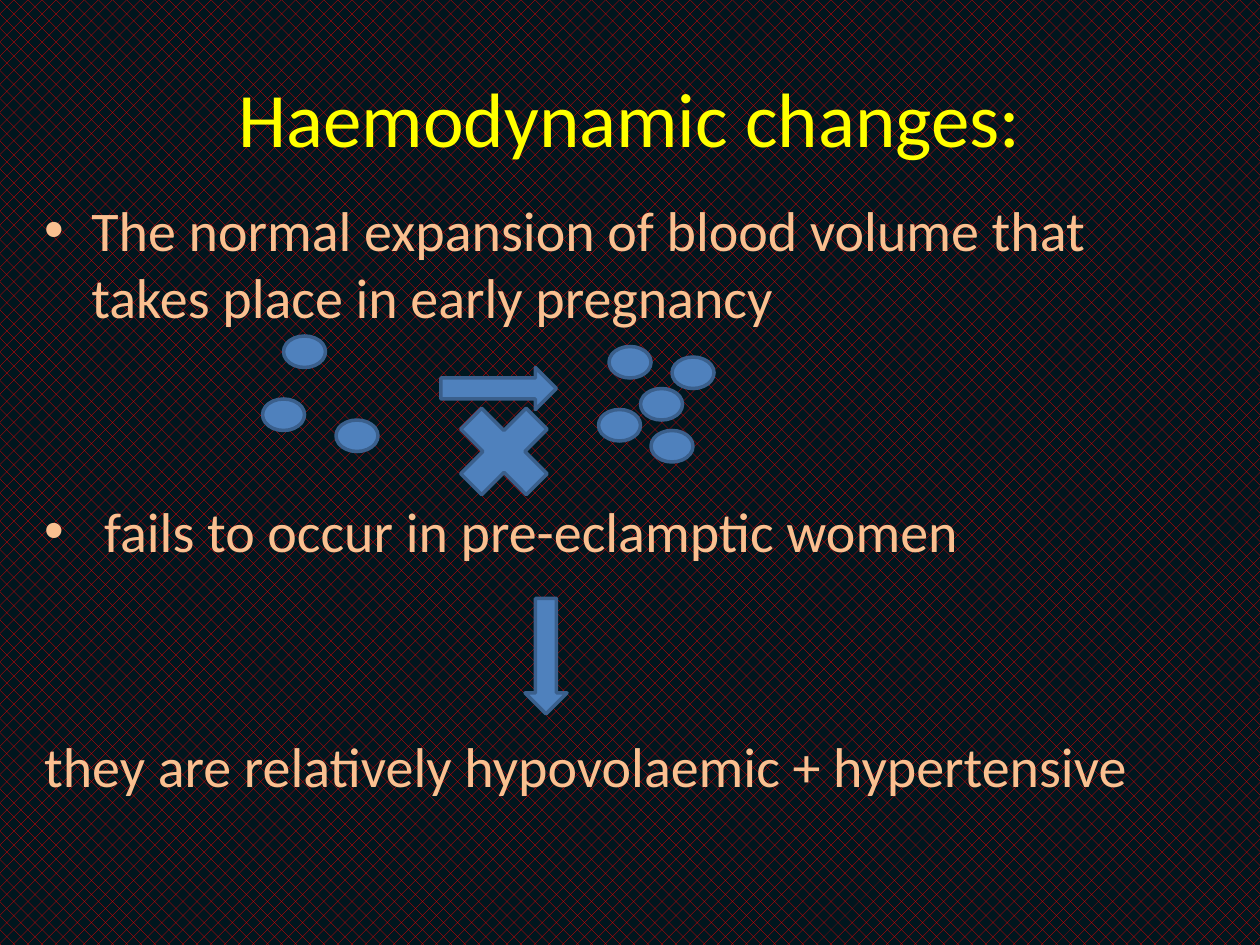
from typing import NamedTuple

from lxml.etree import SubElement
from pptx import Presentation
from pptx.dml.color import RGBColor
from pptx.enum.dml import MSO_PATTERN as Pattern
from pptx.enum.shapes import MSO_SHAPE as Preset
from pptx.enum.text import MSO_ANCHOR as Anchor, PP_ALIGN as Align
from pptx.oxml.ns import qn
from pptx.util import Pt


class Box(NamedTuple):
    left: float
    top: float
    width: float
    height: float


class Symbol(NamedTuple):
    preset: Preset
    box: Box


class Statement(NamedTuple):
    text: str
    space_before: float
    bulleted: bool = True


FONT = "Calibri"
SPARSE_CELLS = [(162, 192), (150, 228), (192, 240)]
CROWDED_CELLS = [(342, 234), (348, 198), (384, 204), (372, 246), (366, 222)]
SYMBOLS = [
    *(Symbol(Preset.OVAL, Box(left, top, 24, 18)) for left, top in SPARSE_CELLS + CROWDED_CELLS),
    Symbol(Preset.RIGHT_ARROW, Box(252, 210, 66, 24)),
    Symbol(Preset.MATH_MULTIPLY, Box(252, 222, 72, 72)),
    Symbol(Preset.DOWN_ARROW, Box(300, 342, 24, 66)),
]
STATEMENTS = [
    Statement("The normal expansion of blood volume that takes place in early pregnancy", 6.4),
    Statement(" fails to occur in pre-eclamptic women", 95.5),
    Statement("they are relatively hypovolaemic + hypertensive", 95.5, bulleted=False),
]


def set_color(color_format, value: str) -> None:
    """Apply a hex colour to a colour format."""
    color_format.rgb = RGBColor.from_string(value)


def place(shape, box: Box) -> None:
    """Move and size a shape in points."""
    shape.left, shape.top, shape.width, shape.height = map(Pt, box)


def style_font(paragraph, size: float, color: str) -> None:
    """Set the font of a whole paragraph."""
    paragraph.font.name = FONT
    paragraph.font.size = Pt(size)
    set_color(paragraph.font.color, color)


def paint_background(slide) -> None:
    """Fill the background with a red pattern on near black."""
    fill = slide.background.fill
    fill.patterned()
    fill.pattern = Pattern.PERCENT_25
    set_color(fill.fore_color, "FF0000")
    set_color(fill.back_color, "00161E")


def write_title(title, text: str) -> None:
    """Fill the title placeholder."""
    place(title, Box(36, 21.6, 648, 90))
    title.text_frame.text = text
    title.text_frame.vertical_anchor = Anchor.MIDDLE
    paragraph = title.text_frame.paragraphs[0]
    paragraph.alignment = Align.CENTER
    style_font(paragraph, 44, "FFFF00")


def write_statements(body, statements: list[Statement]) -> None:
    """Fill the body placeholder with spaced statements."""
    place(body, Box(18, 108, 684, 408))
    frame = body.text_frame
    frame.text = "\n".join(statement.text for statement in statements)
    for paragraph, statement in zip(frame.paragraphs, statements):
        style_font(paragraph, 32, "FAC090")
        paragraph.space_before = Pt(statement.space_before)
        if not statement.bulleted:
            SubElement(paragraph._p.get_or_add_pPr(), qn("a:buNone"))


def draw_symbol(slide, symbol: Symbol) -> None:
    """Draw one outlined blue preset shape."""
    shape = slide.shapes.add_shape(symbol.preset, *map(Pt, symbol.box))
    shape.shadow.inherit = False
    shape.fill.solid()
    set_color(shape.fill.fore_color, "4F81BD")
    set_color(shape.line.color, "3A5F8C")
    shape.line.width = Pt(2)


def main() -> None:
    """Build and save the slide."""
    presentation = Presentation()
    presentation.slide_width, presentation.slide_height = Pt(720), Pt(540)
    slide = presentation.slides.add_slide(presentation.slide_layouts[1])
    paint_background(slide)
    write_title(slide.shapes.title, "Haemodynamic changes:")
    write_statements(slide.placeholders[1], STATEMENTS)
    for symbol in SYMBOLS:
        draw_symbol(slide, symbol)
    presentation.save("out.pptx")


if __name__ == "__main__":
    main()
